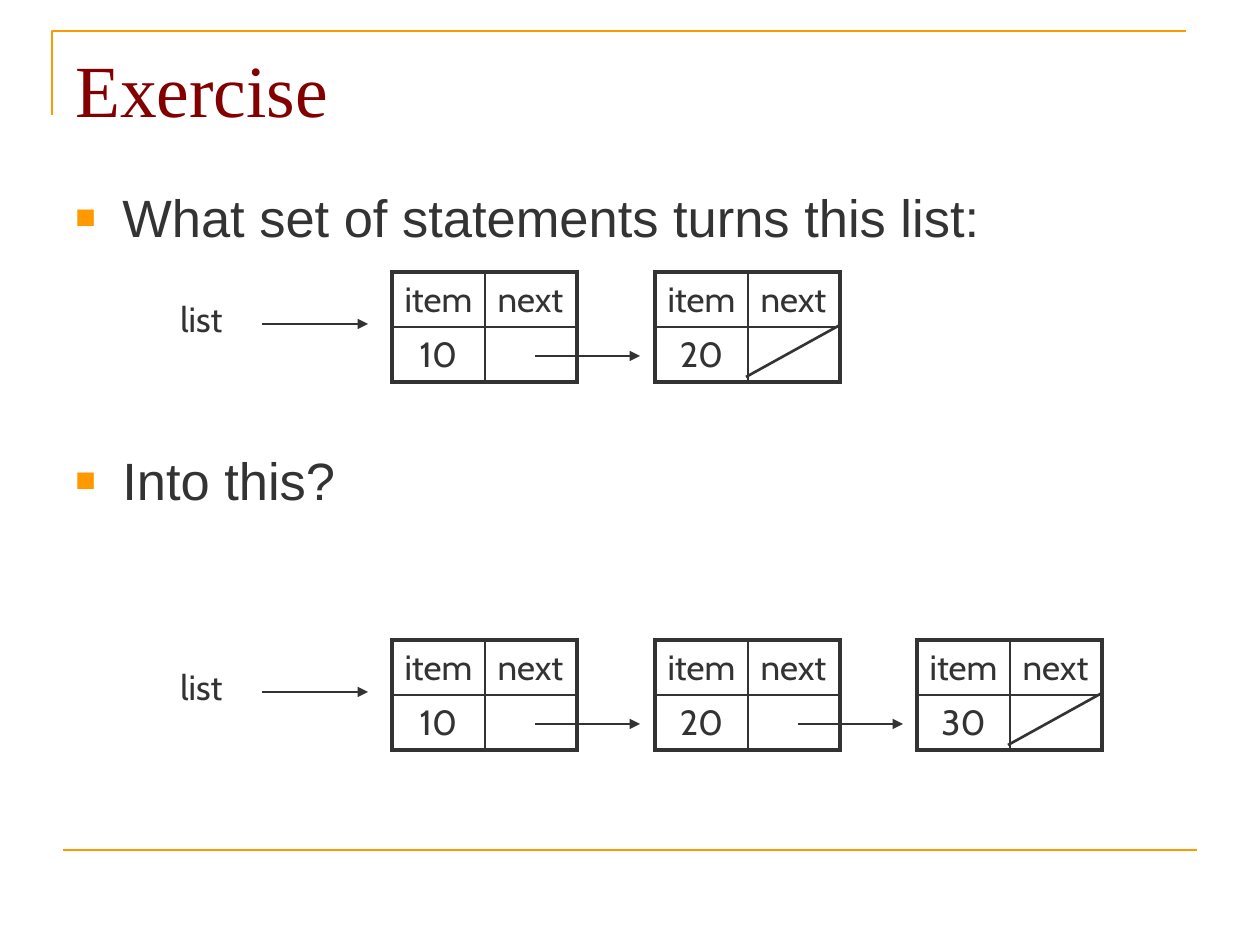
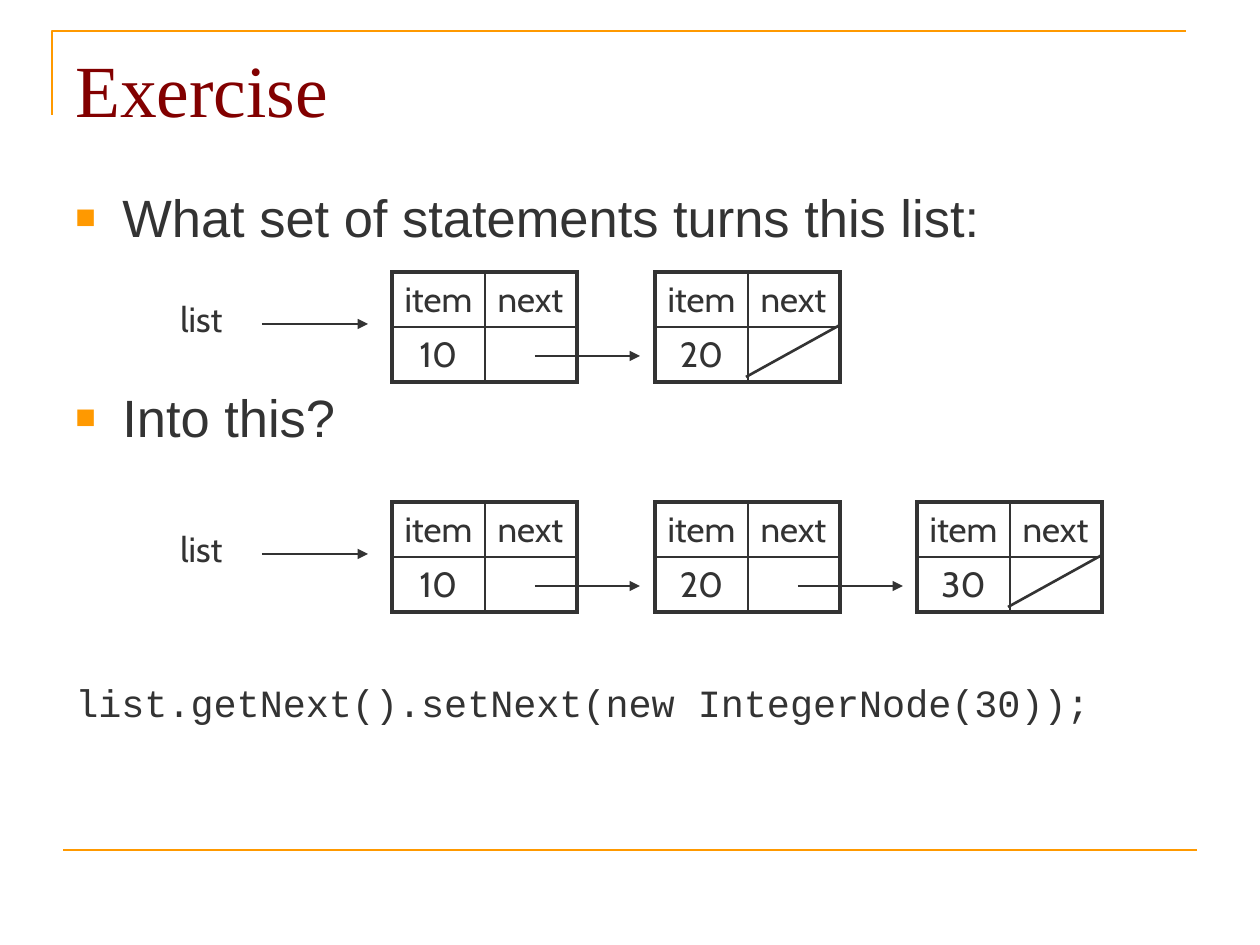
import dataclasses

import lxml.etree
import pptx
import pptx.dml.color
import pptx.enum.shapes
import pptx.enum.text
import pptx.oxml.ns
import pptx.presentation
import pptx.slide
import pptx.table
import pptx.text.text
import pptx.util

# Scale, colours and fonts
PX_PER_INCH = 126
ORANGE = pptx.dml.color.RGBColor(0xFF, 0x99, 0x00)
MAROON = pptx.dml.color.RGBColor(0x82, 0x00, 0x00)
CHARCOAL = pptx.dml.color.RGBColor(0x33, 0x33, 0x33)
TITLE_FONT = "Times New Roman"
BODY_FONT = "Arial"
CODE_FONT = "Courier New"
NODE_FONT = "Cabin"
LINE_WIDTH = 1.5
OUTER_BORDER = 2.25
INNER_BORDER = 1

# Node grid, in px
NODE_LEFT = 392
TWO_NODE_PITCHES = 525
COLUMN_WIDTHS = (93, 92)
ROW_HEIGHT = 55
CELL_MARGIN_RIGHT = 6
BULLET_INDENT = 47


@dataclasses.dataclass(frozen=True)
class TextLine:
    text: str
    space_before: float = 0
    size: int = 30
    font: str = BODY_FONT
    bullet: bool = True


@dataclasses.dataclass(frozen=True)
class LinkedList:
    top: int
    items: tuple[int, ...]


@dataclasses.dataclass(frozen=True)
class ExerciseSlide:
    lines: tuple[TextLine, ...]
    lists: tuple[LinkedList, ...]


QUESTION = "What set of statements turns this list:"
RESULT = "Into this?"
START_LIST = LinkedList(272, (10, 20))
RESULT_ITEMS = (10, 20, 30)

SLIDES = (
    ExerciseSlide(
        (TextLine(QUESTION), TextLine(RESULT, 114.5)),
        (START_LIST, LinkedList(640, RESULT_ITEMS)),
    ),
    ExerciseSlide(
        (
            TextLine(QUESTION),
            TextLine(RESULT, 78.5),
            TextLine("list.getNext().setNext(new IntegerNode(30));",
                     131.5, 22, CODE_FONT, bullet=False),
        ),
        (START_LIST, LinkedList(502, RESULT_ITEMS)),
    ),
)


def px(length: int) -> pptx.util.Emu:
    return pptx.util.Emu(round(length * 914400 / PX_PER_INCH))


def add_element(parent: lxml.etree._Element, tag: str, **attributes: str) -> lxml.etree._Element:
    return lxml.etree.SubElement(parent, pptx.oxml.ns.qn(tag), attributes)


def format_paragraph(paragraph: pptx.text.text._Paragraph, font: str, size: int,
                     color: pptx.dml.color.RGBColor = CHARCOAL) -> None:
    for run in paragraph.runs:
        run.font.name = font
        run.font.size = pptx.util.Pt(size)
        run.font.color.rgb = color


def add_text_box(slide: pptx.slide.Slide, left: int, top: int, width: int, height: int,
                 wrap: bool = True) -> pptx.text.text.TextFrame:
    text_frame = slide.shapes.add_textbox(px(left), px(top), px(width), px(height)).text_frame
    text_frame.word_wrap = wrap
    return text_frame


def add_line(slide: pptx.slide.Slide, start: tuple[int, int], end: tuple[int, int],
             color: pptx.dml.color.RGBColor = CHARCOAL, arrow: bool = False) -> None:
    connector = slide.shapes.add_connector(
        pptx.enum.shapes.MSO_CONNECTOR.STRAIGHT, *map(px, start + end))
    connector.line.color.rgb = color
    connector.line.width = pptx.util.Pt(LINE_WIDTH)
    if arrow:
        add_element(connector.line._get_or_add_ln(), "a:tailEnd", type="triangle")
    add_element(connector._element.spPr, "a:effectLst")


# Frame and title shared by the slides
def add_frame(slide: pptx.slide.Slide) -> None:
    builder = slide.shapes.build_freeform(px(52), px(115))
    builder.add_line_segments([(px(52), px(31)), (px(1186), px(31))], close=False)
    corner = builder.convert_to_shape()
    corner.shadow.inherit = False
    corner.fill.background()
    corner.line.color.rgb = ORANGE
    corner.line.width = pptx.util.Pt(LINE_WIDTH)
    add_line(slide, (63, 850), (1197, 850), ORANGE)

    title = add_text_box(slide, 63, 38, 1134, 130)
    title.text = "Exercise"
    format_paragraph(title.paragraphs[0], TITLE_FONT, 42, MAROON)


# Body text
def add_bullet(paragraph: pptx.text.text._Paragraph) -> None:
    properties = paragraph._p.get_or_add_pPr()
    properties.set("marL", str(px(BULLET_INDENT)))
    properties.set("indent", str(-px(BULLET_INDENT)))
    add_element(add_element(properties, "a:buClr"), "a:srgbClr", val=str(ORANGE))
    add_element(properties, "a:buSzPct", val="65000")
    add_element(properties, "a:buFont", typeface=BODY_FONT)
    add_element(properties, "a:buChar", char="■")


def add_body(slide: pptx.slide.Slide, lines: tuple[TextLine, ...]) -> None:
    body = add_text_box(slide, 63, 179, 1134, 655)
    body.text = "\n".join(line.text for line in lines)
    for paragraph, line in zip(body.paragraphs, lines):
        paragraph.space_before = pptx.util.Pt(line.space_before)
        format_paragraph(paragraph, line.font, line.size)
        if line.bullet:
            add_bullet(paragraph)


# Linked-list diagrams
def set_borders(cell: pptx.table._Cell, row: int, column: int) -> None:
    outer_sides = ("a:lnL", "a:lnR")[column], ("a:lnT", "a:lnB")[row]
    properties = cell._tc.get_or_add_tcPr()
    for side in ("a:lnL", "a:lnR", "a:lnT", "a:lnB"):
        width = OUTER_BORDER if side in outer_sides else INNER_BORDER
        border = add_element(properties, side, w=str(pptx.util.Pt(width)))
        add_element(add_element(border, "a:solidFill"), "a:srgbClr", val=str(CHARCOAL))


def add_node(slide: pptx.slide.Slide, left: int, top: int, item: int) -> None:
    table = slide.shapes.add_table(
        2, 2, px(left), px(top), px(sum(COLUMN_WIDTHS)), px(2 * ROW_HEIGHT)).table
    table.first_row = False
    table.horz_banding = False
    for column, width in zip(table.columns, COLUMN_WIDTHS):
        column.width = px(width)
    for row, texts in enumerate((("item", "next"), (str(item), ""))):
        table.rows[row].height = px(ROW_HEIGHT)
        for column, text in enumerate(texts):
            cell = table.cell(row, column)
            cell.text_frame.text = text
            paragraph = cell.text_frame.paragraphs[0]
            format_paragraph(paragraph, NODE_FONT, 20)
            if row == 0:
                cell.margin_right = px(CELL_MARGIN_RIGHT)
            else:
                paragraph.alignment = pptx.enum.text.PP_ALIGN.CENTER
            set_borders(cell, row, column)
            cell.fill.background()


def add_linked_list(slide: pptx.slide.Slide, linked_list: LinkedList) -> None:
    top = linked_list.top
    label = add_text_box(slide, 168, top + 19, 69, 54, wrap=False)
    label.text = "list"
    format_paragraph(label.paragraphs[0], NODE_FONT, 20)
    add_line(slide, (262, top + 52), (368, top + 52), arrow=True)

    lefts = [NODE_LEFT + (index * TWO_NODE_PITCHES + 1) // 2
             for index in range(len(linked_list.items))]
    for left, item in zip(lefts, linked_list.items):
        add_node(slide, left, top, item)
    for left in lefts[:-1]:
        add_line(slide, (left + 143, top + 84), (left + 248, top + 84), arrow=True)
    # A slash marks the empty reference in the last node
    add_line(slide, (lefts[-1] + 185, top + 53), (lefts[-1] + 91, top + 105))


def main() -> None:
    presentation = pptx.Presentation()
    presentation.slide_width = px(1260)
    presentation.slide_height = px(945)
    for content in SLIDES:
        slide = presentation.slides.add_slide(presentation.slide_layouts[6])
        add_frame(slide)
        add_body(slide, content.lines)
        for linked_list in content.lists:
            add_linked_list(slide, linked_list)
    presentation.save("out.pptx")


if __name__ == "__main__":
    main()
